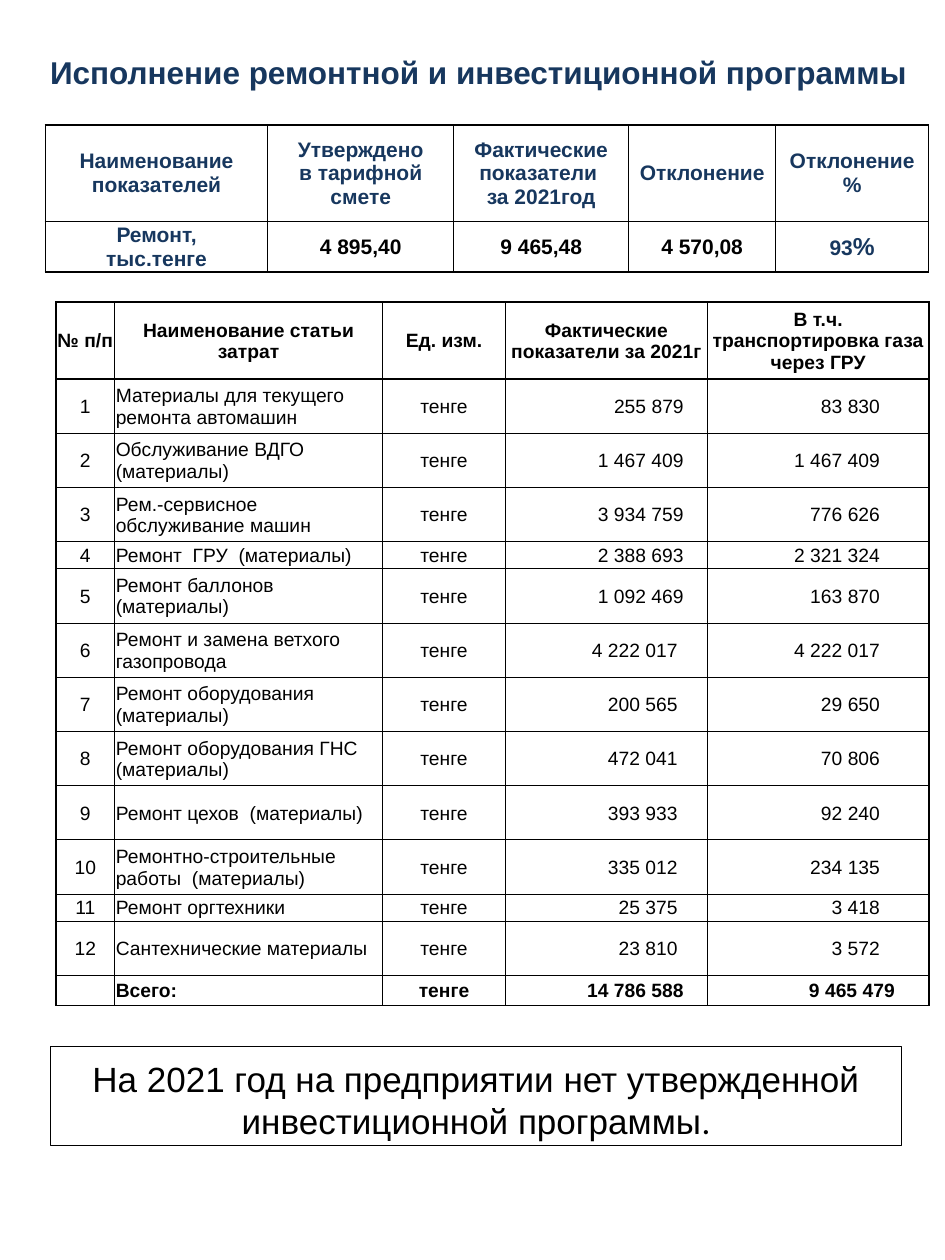
from lxml import etree
from pptx import Presentation
from pptx.dml.color import RGBColor
from pptx.enum import shapes, text
from pptx.oxml import ns
from pptx.util import Pt

COLORS = {"navy": "17375E", "black": "000000"}
LEFT, CENTER, RIGHT = text.PP_ALIGN.LEFT, text.PP_ALIGN.CENTER, text.PP_ALIGN.RIGHT
THIN, THICK = 0.5, 1

SUMMARY_HEADER = ["Наименование показателей", "Утверждено\vв тарифной смете",
                  "Фактические показатели \vза 2021год", "Отклонение", "Отклонение\v%"]
SUMMARY_VALUES = ["Ремонт,\nтыс.тенге", "4 895,40", "9 465,48", "4 570,08", "93"]
SUMMARY_COLS = [127, 106.3, 100, 84, 87.4]
SUMMARY_ROWS = [55.4, 24]

COST_HEADER = ["№ п/п", "Наименование статьи затрат", "Ед. изм.",
               "Фактические показатели за 2021г", "В т.ч. транспортировка газа через ГРУ"]
COSTS = [
    ("Материалы для текущего ремонта автомашин", "255 879", "83 830"),
    ("Обслуживание ВДГО (материалы)", "1 467 409", "1 467 409"),
    ("Рем.-сервисное обслуживание машин", "3 934 759", "776 626"),
    ("Ремонт  ГРУ  (материалы)", "2 388 693", "2 321 324"),
    ("Ремонт баллонов (материалы)", "1 092 469", "163 870"),
    ("Ремонт и замена ветхого газопровода", "4 222 017", "4 222 017"),
    ("Ремонт оборудования (материалы)", "200 565", "29 650"),
    ("Ремонт оборудования ГНС (материалы)", "472 041", "70 806"),
    ("Ремонт цехов  (материалы)", "393 933", "92 240"),
    ("Ремонтно-строительные работы  (материалы)", "335 012", "234 135"),
    ("Ремонт оргтехники", "25 375", "3 418"),
    ("Сантехнические материалы", "23 810", "3 572"),
]
TOTAL = ["", "Всего:", "тенге", "14 786 588", "9 465 479"]
COST_COLS = [33.5, 153.2, 70.2, 115.4, 126.6]
COST_ALIGN = [CENTER, LEFT, CENTER, RIGHT, RIGHT]
SHORT_ROWS = (4, 11)


def format_run(r, size, color="black", bold=False, font="Arial"):
    r.font.name, r.font.size, r.font.bold = font, Pt(size), bold
    r.font.color.rgb = RGBColor.from_string(COLORS[color])


def set_text(tf, content, size, color="black", bold=False, align=CENTER):
    tf.text = content
    tf.word_wrap = True
    for p in tf.paragraphs:
        p.alignment = align
        for r in p.runs:
            format_run(r, size, color, bold)
        if not p.runs:
            etree.SubElement(p._p, ns.qn("a:endParaRPr"), sz=str(size * 100))


def set_margins(box, left=0, top=0, right=0, bottom=0):
    box.margin_left, box.margin_top = Pt(left), Pt(top)
    box.margin_right, box.margin_bottom = Pt(right), Pt(bottom)


def set_borders(cell, left, right, top, bottom):
    """Draw the four cell edges with the given widths in points."""
    tc_pr = cell._tc.get_or_add_tcPr()
    for i, (side, width) in enumerate(zip("LRTB", (left, right, top, bottom))):
        ln = etree.Element(ns.qn(f"a:ln{side}"), w=str(Pt(width)))
        fill = etree.SubElement(ln, ns.qn("a:solidFill"))
        etree.SubElement(fill, ns.qn("a:srgbClr"), val=COLORS["black"])
        tc_pr.insert(i, ln)


def add_grid(s, left, top, cols, rows):
    """Add an unstyled table with the given column widths and row heights."""
    table = s.shapes.add_table(len(rows), len(cols), Pt(left), Pt(top),
                               Pt(sum(cols)), Pt(sum(rows))).table
    table.first_row = table.horz_banding = False
    for column, width in zip(table.columns, cols):
        column.width = Pt(width)
    for row, height in zip(table.rows, rows):
        row.height = Pt(height)
    for cell in table.iter_cells():
        cell.fill.background()
        cell.vertical_anchor = text.MSO_ANCHOR.MIDDLE
    return table


def add_title(s):
    box = s.shapes.add_textbox(Pt(21), Pt(14.5), Pt(505), Pt(53))
    tf = box.text_frame
    set_margins(tf)
    tf.vertical_anchor = text.MSO_ANCHOR.MIDDLE
    set_text(tf, "Исполнение ремонтной и инвестиционной программы", 18, "navy", True)


def add_summary_table(s):
    table = add_grid(s, 26, 71.3, SUMMARY_COLS, SUMMARY_ROWS)
    for i, values in enumerate((SUMMARY_HEADER, SUMMARY_VALUES)):
        for j, value in enumerate(values):
            cell = table.cell(i, j)
            color = "black" if i == 1 and 1 <= j <= 3 else "navy"
            set_margins(cell)
            set_text(cell.text_frame, value, 12, color, True)
            set_borders(cell, THICK, THICK, THICK, THICK)
    r = table.cell(1, 4).text_frame.paragraphs[0].add_run()
    r.text = "%"
    format_run(r, 14, "navy", True)


def number_indent(row, col, total_row):
    """Right margin that lines up the figures of one column."""
    if col == 3:
        return 13.5 if row <= 5 or row == total_row else 17
    return 19.5 if row == total_row else 28


def add_cost_table(s):
    items = [[str(n), name, "тенге", fact, transport]
             for n, (name, fact, transport) in enumerate(COSTS, 1)]
    rows = [COST_HEADER, *items, TOTAL]
    last_row, last_col = len(rows) - 1, len(COST_COLS) - 1
    heights = [44, *(15.5 if n in SHORT_ROWS else 31 for n in range(1, last_row)), 17.2]
    table = add_grid(s, 32, 172.6, COST_COLS, heights)
    for i, values in enumerate(rows):
        for j, value in enumerate(values):
            cell = table.cell(i, j)
            align = CENTER if i == 0 else COST_ALIGN[j]
            indent = number_indent(i, j, last_row) if align == RIGHT else 0.7
            set_margins(cell, 0.7, 0.7, indent)
            set_text(cell.text_frame, value, 11, bold=i in (0, last_row), align=align)
            set_borders(cell,
                        THICK if j == 0 else THIN,
                        THICK if j == last_col else THIN,
                        THICK if i in (0, 1, last_row) else THIN,
                        THICK if i in (0, last_row - 1, last_row) else THIN)


def add_note(s):
    sp = s.shapes.add_shape(shapes.MSO_SHAPE.RECTANGLE, Pt(29), Pt(598), Pt(486), Pt(56.5))
    sp.shadow.inherit = False
    sp.fill.background()
    sp.line.color.rgb = RGBColor.from_string(COLORS["black"])
    sp.line.width = Pt(THIN)
    tf = sp.text_frame
    set_margins(tf, 7.2, 6, 7.2)
    tf.vertical_anchor = text.MSO_ANCHOR.TOP
    set_text(tf, "На 2021 год на предприятии нет утвержденной инвестиционной программы", 20)
    r = tf.paragraphs[0].add_run()
    r.text = "."
    format_run(r, 20, font="Calibri")


def main():
    prs = Presentation()
    prs.slide_width, prs.slide_height = Pt(540), Pt(720)
    s = prs.slides.add_slide(prs.slide_layouts[6])
    add_title(s)
    add_summary_table(s)
    add_cost_table(s)
    add_note(s)
    prs.save("out.pptx")


if __name__ == "__main__":
    main()
